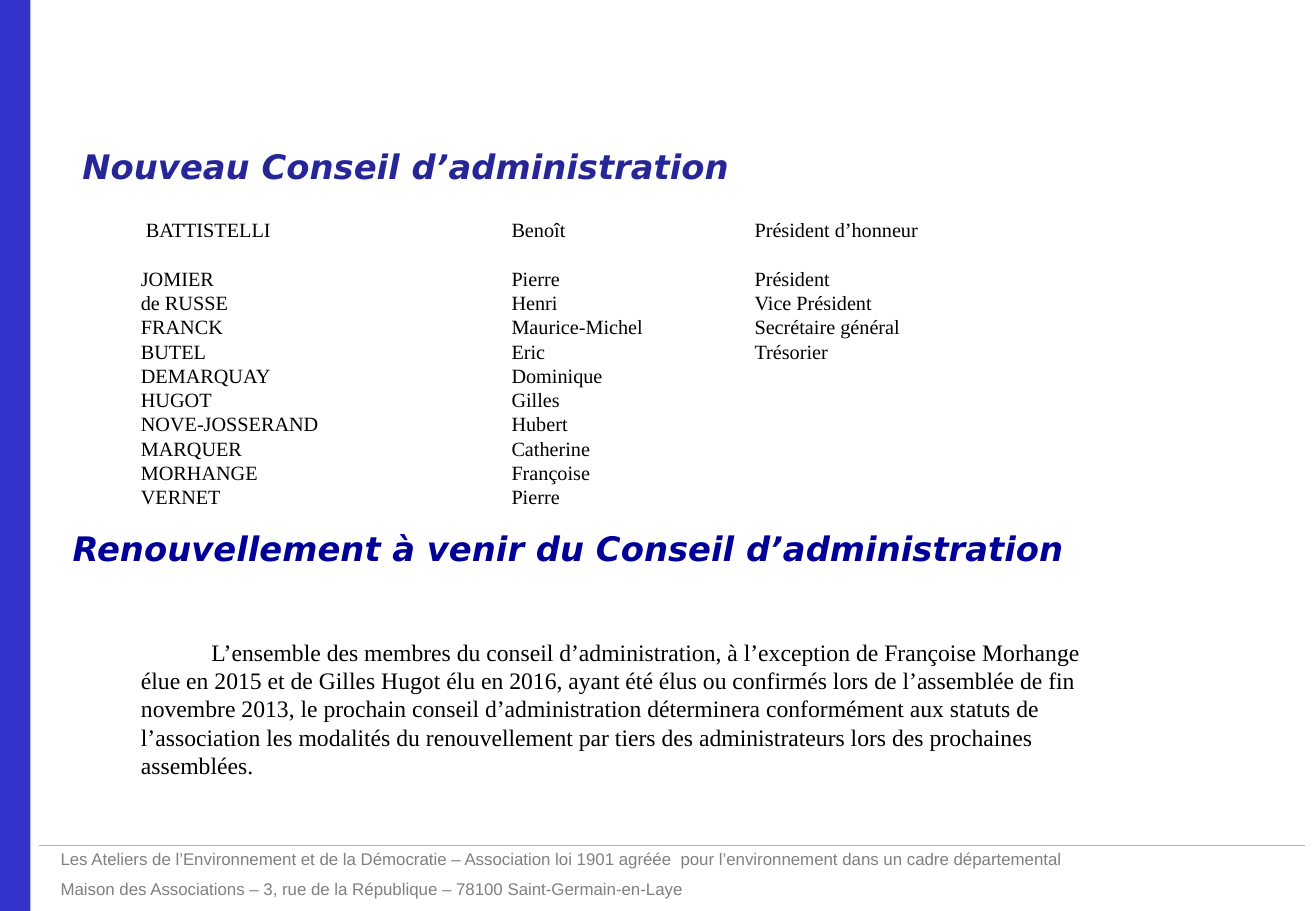
from lxml import etree
from pptx import Presentation, util as u
from pptx.dml.color import RGBColor
from pptx.enum import shapes, text
from pptx.oxml.ns import qn

HUES = {"bar": "3333CC", "rule": "B2B2B2", "foot": "808080",
        "first": "262699", "next": "000099", "body": "000000"}
HEAD = {"name": "DejaVu Sans", "size": u.Pt(20), "bold": True, "italic": True}
LIST = {"name": "Times New Roman", "size": u.Pt(12)}
BODY = {"name": "Times New Roman", "size": u.Pt(14)}
FOOT = {"name": "Arial", "size": u.Pt(10)}
TABS = (3.05, 5.05)
HONOR = (" BATTISTELLI", "Benoît", "Président d’honneur")
BOARD = [
    ("JOMIER", "Pierre", "Président"),
    ("de RUSSE", "Henri", "Vice Président"),
    ("FRANCK", "Maurice-Michel", "Secrétaire général"),
    ("BUTEL", "Eric", "Trésorier"),
    ("DEMARQUAY", "Dominique"),
    ("HUGOT", "Gilles"),
    ("NOVE-JOSSERAND", "Hubert"),
    ("MARQUER", "Catherine"),
    ("MORHANGE", "Françoise"),
    ("VERNET", "Pierre"),
]
TERMS = (
    "L’ensemble des membres du conseil d’administration, à l’exception de "
    "Françoise Morhange élue en 2015 et de Gilles Hugot élu en 2016, ayant été "
    "élus ou confirmés lors de l’assemblée de fin novembre 2013, le prochain "
    "conseil d’administration déterminera conformément aux statuts de "
    "l’association les modalités du renouvellement par tiers des "
    "administrateurs lors des prochaines assemblées.")
ABOUT = [
    "Les Ateliers de l’Environnement et de la Démocratie – Association loi 1901 "
    "agréée  pour l’environnement dans un cadre départemental",
    "Maison des Associations – 3, rue de la République – 78100 Saint-Germain-en-Laye",
]


def tint(hue):
    """Return the named colour."""
    return RGBColor.from_string(HUES[hue])


def write(slide, box, lines, font, hue, inset=True, **style):
    """Write lines in a box and return their paragraphs."""
    frame = slide.shapes.add_textbox(*map(u.Inches, box)).text_frame
    frame.word_wrap = True
    frame.vertical_anchor = text.MSO_ANCHOR.TOP
    if not inset:
        for side in ("left", "top", "right", "bottom"):
            setattr(frame, "margin_" + side, 0)
    frame.text = "\n".join(lines)
    for para in frame.paragraphs:
        for key, value in style.items():
            setattr(para, key, value)
        for run in para.runs:
            for key, value in font.items():
                setattr(run.font, key, value)
            run.font.color.rgb = tint(hue)
    return frame.paragraphs


def draw_bar(slide, box):
    """Draw the coloured band on the left edge."""
    bar = slide.shapes.add_shape(shapes.MSO_SHAPE.RECTANGLE, *map(u.Inches, box))
    bar.shadow.inherit = False
    bar.fill.solid()
    bar.fill.fore_color.rgb = tint("bar")
    bar.line.fill.background()


def draw_board(slide, box):
    """List the board members in columns set by tab stops."""
    rows = ["\t".join(row) for row in [HONOR] + BOARD]
    paras = write(slide, box, rows, LIST, "body", False, line_spacing=u.Pt(14.4))
    paras[0].space_after = u.Pt(14.4)
    for para in paras:
        stops = etree.SubElement(para._p.get_or_add_pPr(), qn("a:tabLst"))
        for stop in TABS:
            etree.SubElement(stops, qn("a:tab"), pos=str(u.Inches(stop)), algn="l")


def draw_terms(slide, box):
    """Write the renewal terms with an indented first line."""
    para = write(slide, box, [TERMS], BODY, "body", False, line_spacing=u.Pt(16.8))[0]
    para._p.get_or_add_pPr().set("indent", str(u.Inches(0.58)))


def draw_foot(slide, box):
    """Draw the footer rule and the association details."""
    left, top, wide, high = box
    ends = map(u.Inches, (left, top, left + wide, top))
    rule = slide.shapes.add_connector(shapes.MSO_CONNECTOR.STRAIGHT, *ends)
    rule.line.color.rgb = tint("rule")
    rule.line.width = u.Pt(0.25)
    etree.SubElement(rule._element.spPr, qn("a:effectLst"))
    write(slide, (left + 0.08, top - 0.02, 9.25, high), ABOUT, FOOT, "foot",
          space_after=u.Pt(5.5))


def main():
    """Build and save the slide."""
    deck = Presentation()
    deck.slide_width, deck.slide_height = u.Inches(10.83), u.Inches(7.5)
    slide = deck.slides.add_slide(deck.slide_layouts[6])
    draw_bar(slide, (0, 0, 0.25, 7.5))
    draw_foot(slide, (0.32, 6.96, 10.42, 0.52))
    write(slide, (0.58, 1.15, 10.25, 0.44),
          ["Nouveau Conseil d’administration"], HEAD, "first")
    draw_board(slide, (1.16, 1.79, 6.77, 2.4))
    write(slide, (0.5, 4.3, 10.25, 0.44),
          ["Renouvellement à venir du Conseil d’administration"], HEAD, "next")
    draw_terms(slide, (1.16, 5.25, 7.88, 1.17))
    deck.save("out.pptx")


if __name__ == "__main__":
    main()
